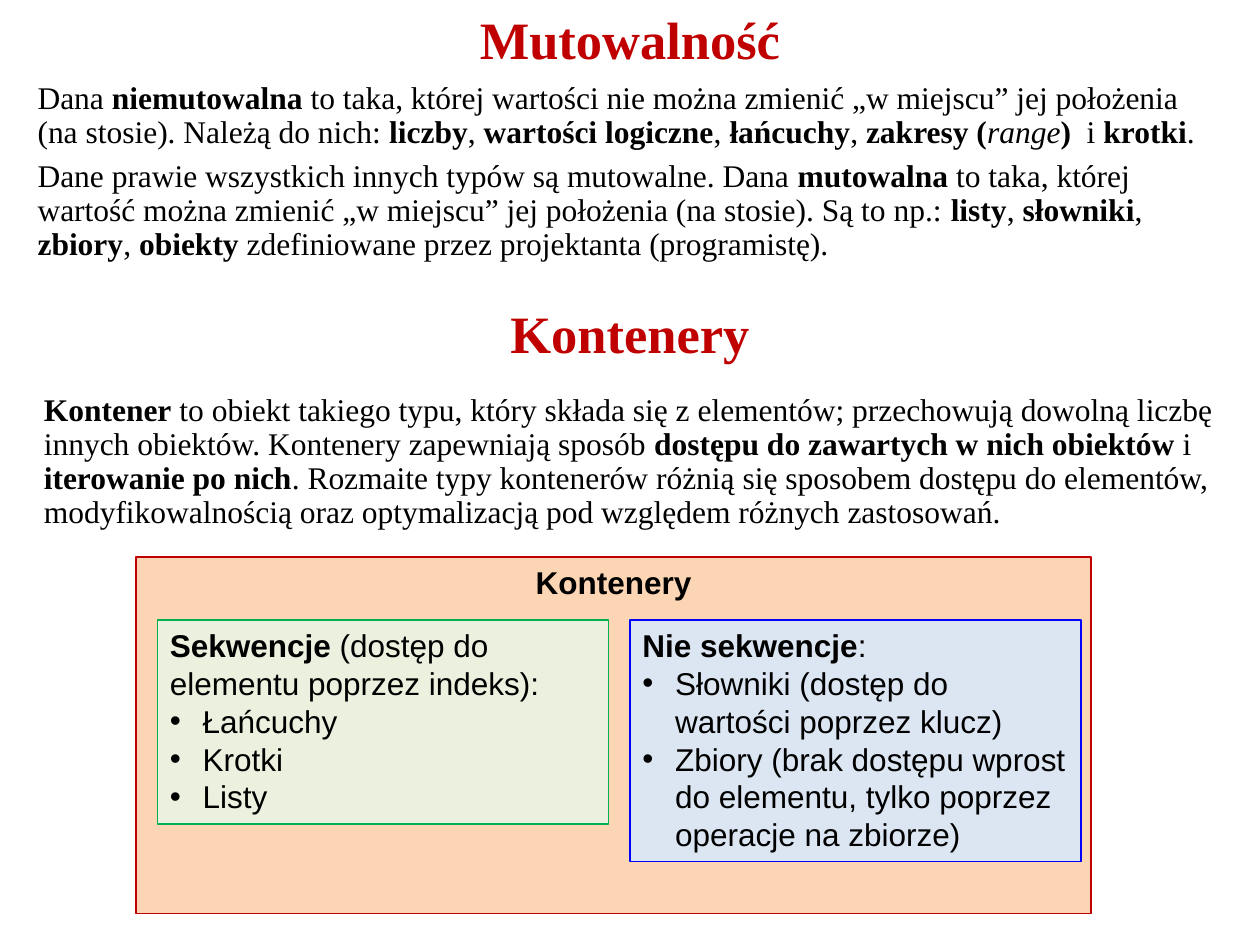
"""Build the slide on mutability and containers."""
from lxml import etree
from pptx import Presentation
from pptx.dml.color import RGBColor
from pptx.enum import shapes, text
from pptx.oxml.ns import qn
from pptx.util import Inches, Pt

RED = RGBColor(0xC0, 0x00, 0x00)
BLACK = RGBColor(0x00, 0x00, 0x00)
PEACH = RGBColor(0xFC, 0xD5, 0xB5)
LIGHT_GREEN = RGBColor(0xEB, 0xF1, 0xDE)
GREEN = RGBColor(0x00, 0xB0, 0x50)
LIGHT_BLUE = RGBColor(0xDC, 0xE6, 0xF2)
BLUE = RGBColor(0x00, 0x00, 0xFF)
SERIF, SANS = "Times New Roman", "Arial"
CENTER, LEFT = text.PP_ALIGN.CENTER, text.PP_ALIGN.LEFT


def write(p, marked, font, size=18, color=BLACK, align=LEFT):
    """Fill a paragraph; *...* is bold and _..._ is italic."""
    p.alignment = align
    for i, part in enumerate(marked.split("*")):
        for j, piece in enumerate(part.split("_")):
            if piece:
                r = p.add_run()
                r.text = piece
                r.font.name, r.font.size = font, Pt(size)
                r.font.color.rgb = color
                r.font.bold, r.font.italic = i % 2 == 1, j % 2 == 1


def bullet(p):
    """Give a paragraph a hanging round bullet."""
    pPr = p._p.get_or_add_pPr()
    pPr.set("marL", str(Inches(0.26)))
    pPr.set("indent", str(Inches(-0.26)))
    etree.SubElement(pPr, qn("a:buFont")).set("typeface", SANS)
    etree.SubElement(pPr, qn("a:buChar")).set("char", "•")


prs = Presentation()
prs.slide_width, prs.slide_height = Inches(10), Inches(7.5)
s = prs.slides.add_slide(prs.slide_layouts[5])

title = s.shapes.title
subtitle = s.shapes.add_textbox(0, 0, Inches(10), Inches(0.68))
for sp, top, heading in [(title, 0, "*Mutowalność*"), (subtitle, 2.33, "*Kontenery*")]:
    sp.left, sp.top = Inches(0), Inches(top)
    sp.width, sp.height = Inches(10), Inches(0.68)
    tf = sp.text_frame
    tf.word_wrap = True
    tf.auto_size = text.MSO_AUTO_SIZE.NONE
    tf.vertical_anchor = text.MSO_ANCHOR.MIDDLE
    p = tf.paragraphs[0]
    p.line_spacing = 0.9
    write(p, heading, SERIF, 30, RED, CENTER)

bodies = [
    (0.2, 0.6, 1.65, [
        "Dana *niemutowalna* to taka, której wartości nie można zmienić „w miejscu” "
        "jej położenia (na stosie). Należą do nich: *liczby*, *wartości logiczne*, "
        "*łańcuchy*,* zakresy (*_range_*) * i *krotki*.",
        "Dane prawie wszystkich innych typów są mutowalne. Dana *mutowalna* to taka, "
        "której wartość można zmienić „w miejscu” jej położenia (na stosie). "
        "Są to np.: *listy*, *słowniki*, *zbiory*, *obiekty* zdefiniowane przez "
        "projektanta (programistę).",
    ]),
    (0.25, 3.08, 1.33, [
        "*Kontener* to obiekt takiego typu, który składa się z elementów; przechowują "
        "dowolną liczbę innych obiektów. Kontenery zapewniają sposób *dostępu do "
        "zawartych w nich obiektów *i *iterowanie po nich*. Rozmaite typy kontenerów "
        "różnią się sposobem dostępu do elementów, modyfikowalnością oraz "
        "optymalizacją pod względem różnych zastosowań.",
    ]),
]
for left, top, height, paragraphs in bodies:
    sp = s.shapes.add_textbox(Inches(left), Inches(top), Inches(9.53), Inches(height))
    tf = sp.text_frame
    tf.word_wrap = True
    for i, marked in enumerate(paragraphs):
        p = tf.add_paragraph() if i else tf.paragraphs[0]
        p.line_spacing, p.space_after = 0.9, Pt(6)
        write(p, marked, SERIF)

boxes = [
    (1.08, 4.42, 7.58, 2.83, PEACH, RED, CENTER, "*Kontenery*", []),
    (1.25, 4.92, 3.58, 1.62, LIGHT_GREEN, GREEN, LEFT,
     "*Sekwencje* (dostęp do elementu poprzez indeks):",
     ["Łańcuchy", "Krotki", "Listy"]),
    (5, 4.92, 3.58, 1.92, LIGHT_BLUE, BLUE, LEFT, "*Nie sekwencje*:",
     ["Słowniki (dostęp do wartości poprzez klucz)",
      "Zbiory (brak dostępu wprost do elementu, tylko poprzez operacje na zbiorze)"]),
]
for left, top, width, height, fill, line, align, heading, items in boxes:
    sp = s.shapes.add_shape(shapes.MSO_SHAPE.RECTANGLE, Inches(left), Inches(top),
                            Inches(width), Inches(height))
    sp.shadow.inherit = False
    sp.fill.solid()
    sp.fill.fore_color.rgb = fill
    sp.line.color.rgb = line
    sp.line.width = Pt(0.75)
    tf = sp.text_frame
    tf.word_wrap = True
    tf.vertical_anchor = text.MSO_ANCHOR.TOP
    write(tf.paragraphs[0], heading, SANS, align=align)
    for item in items:
        p = tf.add_paragraph()
        write(p, item, SANS)
        bullet(p)

prs.save("out.pptx")
